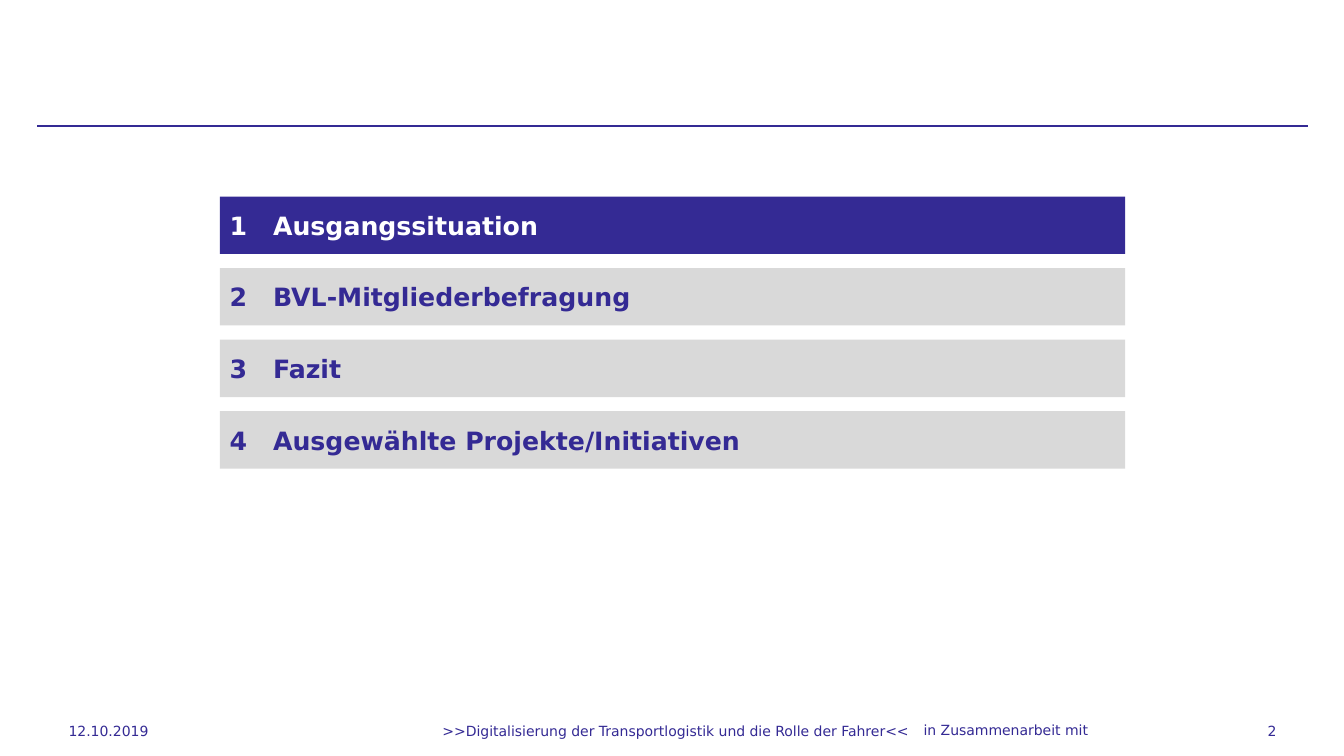
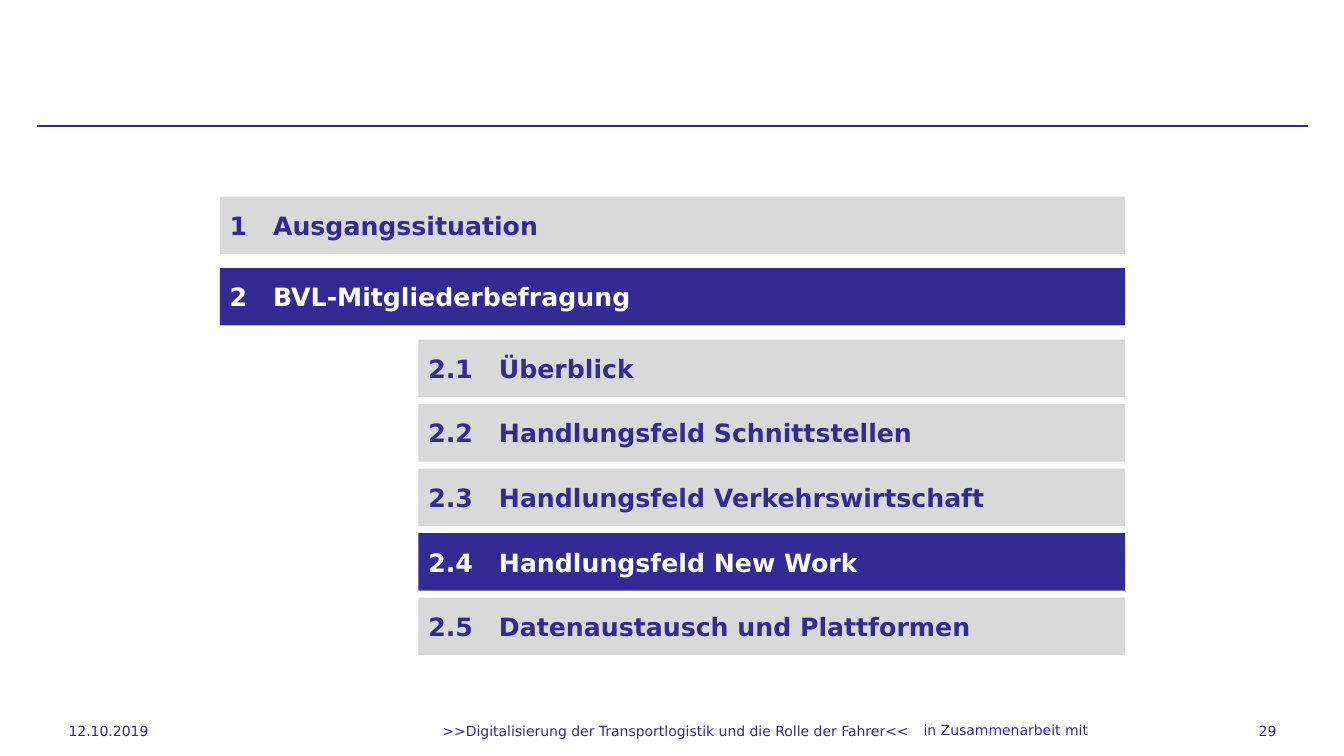
from pptx import Presentation
from pptx.dml.color import RGBColor
from pptx.enum.shapes import MSO_CONNECTOR, MSO_SHAPE
from pptx.enum.text import MSO_ANCHOR, PP_ALIGN
from pptx.oxml.ns import qn
from pptx.util import Inches, Pt
from lxml import etree

STRAIGHT = MSO_CONNECTOR.STRAIGHT
RECTANGLE = MSO_SHAPE.RECTANGLE
MIDDLE = MSO_ANCHOR.MIDDLE
LEFT, CENTER, RIGHT = PP_ALIGN.LEFT, PP_ALIGN.CENTER, PP_ALIGN.RIGHT

COLORS = {"primary": "342A94", "bar": "D9D9D9", "white": "FFFFFF"}
FONT = "DejaVu Sans"
BAR_HEIGHT = 0.57
CHAPTER_BOX = (2.18, 1.95, 8.98)
SECTION_BOX = (4.15, 3.37, 7.01)

CHAPTERS = [
    ("1", "Ausgangssituation"),
    ("2", "BVL-Mitgliederbefragung"),
    ("3", "Fazit"),
    ("4", "Ausgewählte Projekte/Initiativen"),
]
SECTIONS = [
    ("2.1", "Überblick"),
    ("2.2", "Handlungsfeld Schnittstellen"),
    ("2.3", "Handlungsfeld Verkehrswirtschaft"),
    ("2.4", "Handlungsfeld New Work"),
    ("2.5", "Datenaustausch und Plattformen"),
]


def color(name):
    return RGBColor.from_string(COLORS[name])


def style_font(font, size, color_name, bold=False):
    font.name = FONT
    font.size = Pt(size)
    font.bold = bold
    font.color.rgb = color(color_name)


def add_tab_stop(paragraph, position):
    properties = paragraph._p.get_or_add_pPr()
    tab_list = etree.SubElement(properties, qn("a:tabLst"))
    etree.SubElement(tab_list, qn("a:tab"), pos=str(Inches(position)), algn="l")


def add_header_line(slide, left, top, width):
    line = slide.shapes.add_connector(
        STRAIGHT, Inches(left), Inches(top), Inches(left + width), Inches(top))
    line.line.color.rgb = color("primary")
    line.line.width = Pt(0.75)
    etree.SubElement(line._element.spPr, qn("a:effectLst"))


def add_footer_text(slide, text, left, top, width, alignment):
    box = slide.shapes.add_textbox(
        Inches(left), Inches(top), Inches(width), Inches(0.4))
    frame = box.text_frame
    frame.word_wrap = True
    frame.vertical_anchor = MIDDLE
    frame.margin_left = frame.margin_right = 0
    frame.margin_top = frame.margin_bottom = 0
    paragraph = frame.paragraphs[0]
    paragraph.text = text
    paragraph.alignment = alignment
    style_font(paragraph.font, 10, "primary")


def add_footer(slide, top, page_number):
    add_footer_text(slide, "12.10.2019", 0.68, top, 1.57, LEFT)
    add_footer_text(
        slide, ">>Digitalisierung der Transportlogistik und die Rolle der Fahrer<<",
        2.41, top, 8.58, CENTER)
    add_footer_text(slide, "in Zusammenarbeit mit", 8.5, top - 0.01, 2.29, RIGHT)
    add_footer_text(slide, str(page_number), 11.16, top, 1.5, RIGHT)


def add_agenda_bar(slide, number, title, left, top, width, tab, active):
    bar = slide.shapes.add_shape(
        RECTANGLE, Inches(left), Inches(top), Inches(width), Inches(BAR_HEIGHT))
    bar.shadow.inherit = False
    bar.fill.solid()
    bar.fill.fore_color.rgb = color("primary" if active else "bar")
    bar.line.fill.background()
    bar.text_frame.vertical_anchor = MIDDLE
    paragraph = bar.text_frame.paragraphs[0]
    paragraph.text = f"{number}\t{title}"
    paragraph.alignment = LEFT
    paragraph.space_after = Pt(3)
    add_tab_stop(paragraph, tab)
    style_font(paragraph.font, 18, "white" if active else "primary", bold=True)


def add_agenda(slide, entries, box, gap, tab, active_number):
    left, top, width = box
    for index, (number, title) in enumerate(entries):
        bar_top = top + index * (BAR_HEIGHT + gap)
        add_agenda_bar(slide, number, title, left, bar_top, width, tab,
                       number == active_number)


def add_agenda_slide(presentation, page_number, chapters, active_chapter,
                     sections=(), active_section=None):
    slide = presentation.slides.add_slide(presentation.slide_layouts[6])
    add_header_line(slide, 0.37, 1.25, 12.6)
    add_agenda(slide, chapters, CHAPTER_BOX, 0.14, 0.43, active_chapter)
    add_agenda(slide, sections, SECTION_BOX, 0.07, 0.7, active_section)
    add_footer(slide, 7.05, page_number)


def main():
    presentation = Presentation()
    presentation.slide_width = Inches(13.33)
    presentation.slide_height = Inches(7.5)
    add_agenda_slide(presentation, 2, CHAPTERS, "1")
    add_agenda_slide(presentation, 29, CHAPTERS[:2], "2", SECTIONS, "2.4")
    presentation.save("out.pptx")


if __name__ == "__main__":
    main()
